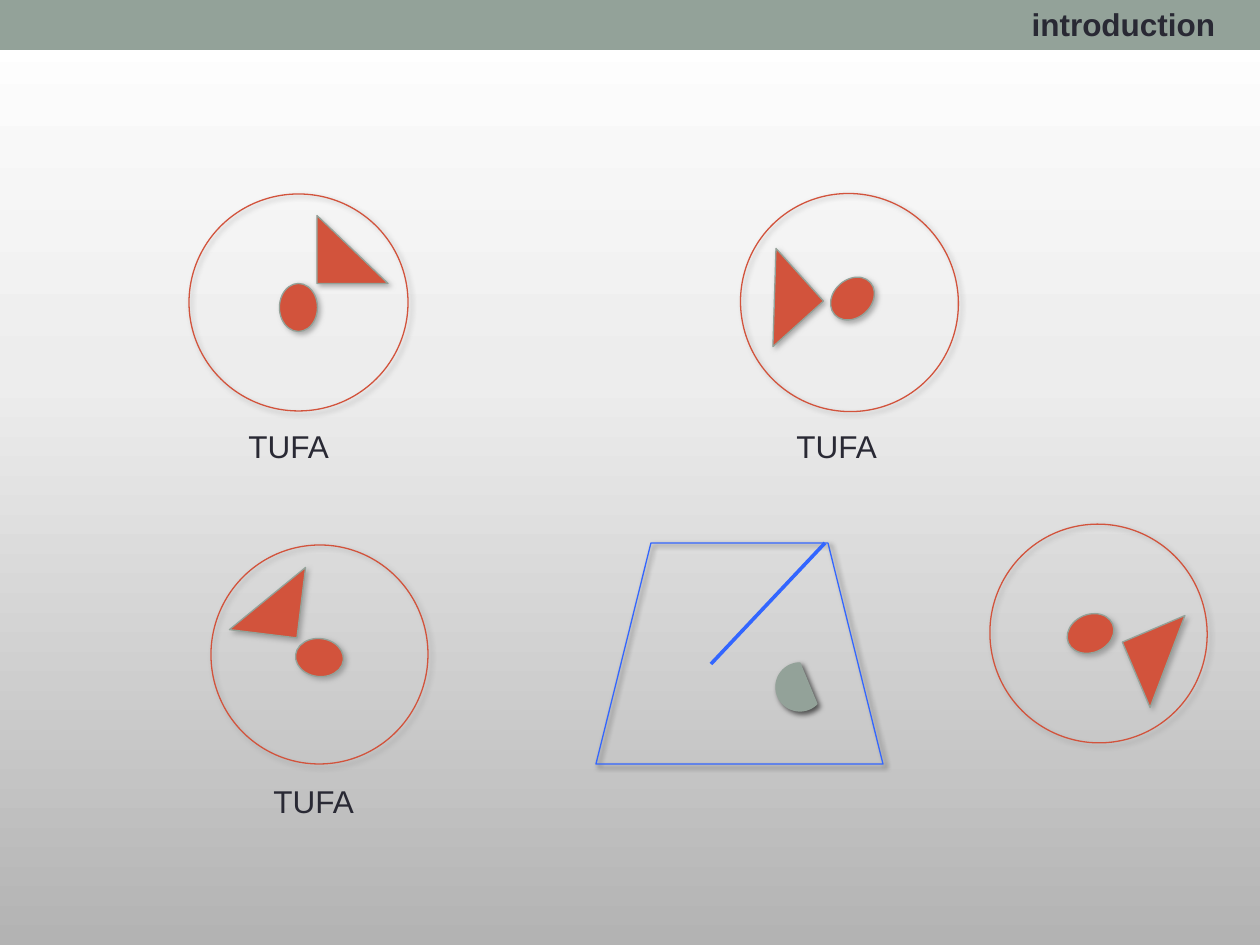
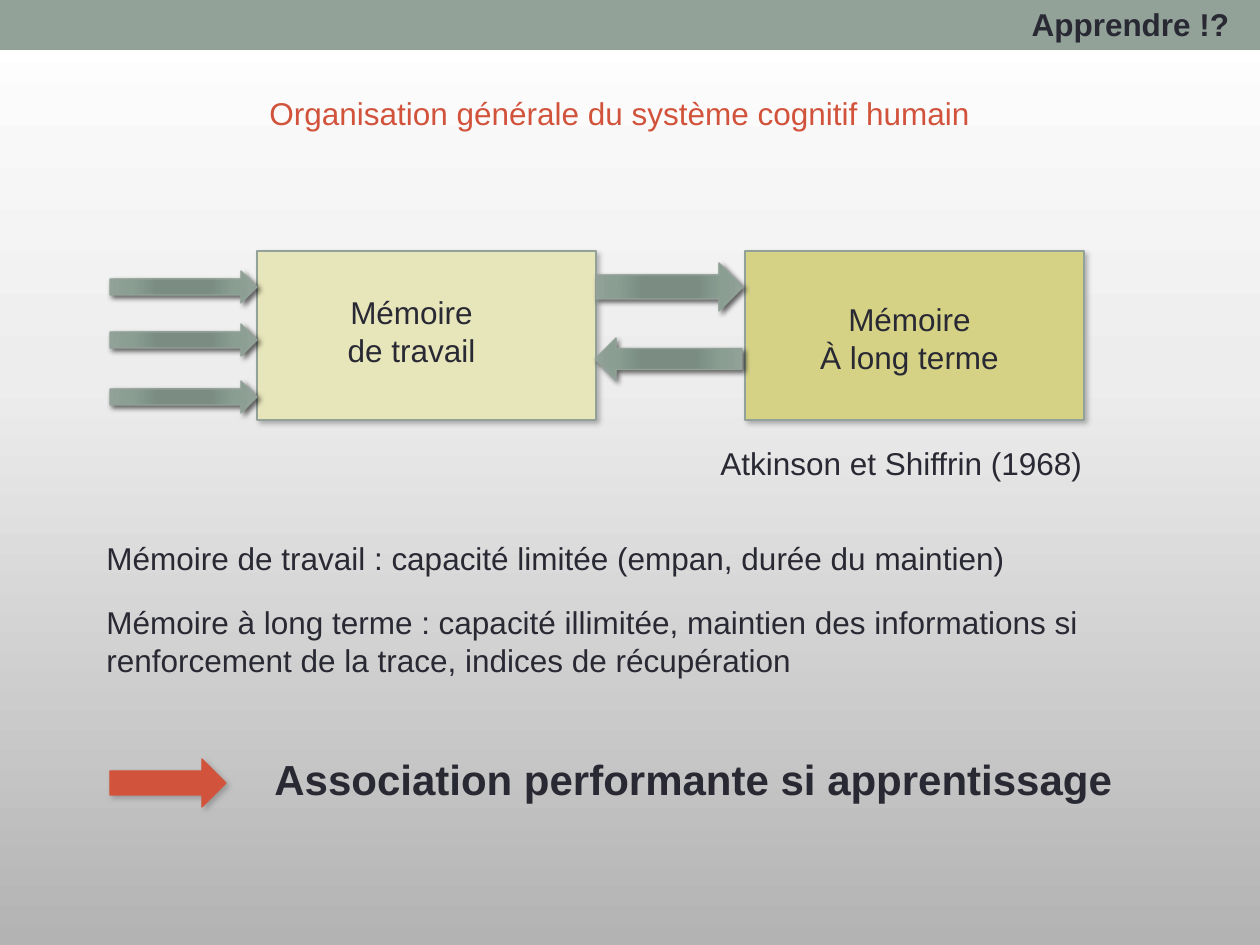
import math

from pptx import Presentation
from pptx.dml.color import RGBColor
from pptx.enum.shapes import MSO_CONNECTOR, MSO_SHAPE
from pptx.enum.text import MSO_ANCHOR, MSO_AUTO_SIZE, PP_ALIGN
from pptx.oxml import parse_xml
from pptx.oxml.ns import nsdecls, qn
from pptx.util import Emu, Pt

ELLIPSE, TRIANGLE = MSO_SHAPE.OVAL, MSO_SHAPE.RIGHT_TRIANGLE
RECTANGLE, ARROW = MSO_SHAPE.RECTANGLE, MSO_SHAPE.RIGHT_ARROW
STRAIGHT = MSO_CONNECTOR.STRAIGHT
LEFT, CENTER = PP_ALIGN.LEFT, PP_ALIGN.CENTER
TOP, MIDDLE = MSO_ANCHOR.TOP, MSO_ANCHOR.MIDDLE
GROW, FIXED = MSO_AUTO_SIZE.SHAPE_TO_FIT_TEXT, MSO_AUTO_SIZE.NONE

FONT = "Arial"
INK, SAGE, RED, BLUE = "292934", "93A299", "D2533C", "3366FF"
WHITE, BLACK, GRAY = "FFFFFF", "000000", "808080"
PALE_OLIVE, OLIVE = "E7E5BA", "D5D286"
PAGE_STOPS = [(0, WHITE), (40, "EDEDED"), (100, "B3B3B3")]
ARROW_STOPS = [(0, "7B8E82"), (34, "7B8D83"), (70, "8A9E92"), (100, SAGE)]
DOWNWARD = '<a:lin ang="5400000" scaled="0"/>'
RADIAL = ('<a:path path="circle"><a:fillToRect l="100000" t="100000" '
          'r="100000" b="100000"/></a:path>')
WIDTH, HEIGHT = 1260, 945
TITLE_ONLY = 5


def px(length):
    return Emu(round(length * 914400 / 126))


def color(hex_string):
    return RGBColor.from_string(hex_string)


def set_gradient(fill, parent, stops, direction):
    fill.solid()
    stop_xml = "".join(
        f'<a:gs pos="{position * 1000}"><a:srgbClr val="{value}"/></a:gs>'
        for position, value in stops)
    gradient = parse_xml(f'<a:gradFill {nsdecls("a")} rotWithShape="1">'
                         f'<a:gsLst>{stop_xml}</a:gsLst>{direction}</a:gradFill>')
    parent.replace(parent.find(qn("a:solidFill")), gradient)


def style_shape(shape, fill=None, line=None, shadow=None):
    if fill:
        shape.fill.solid()
        shape.fill.fore_color.rgb = color(fill)
    else:
        shape.fill.background()
    if line:
        shape.line.color.rgb = color(line)
        shape.line.width = Pt(0.75)
    else:
        shape.line.fill.background()
    shape.shadow.inherit = False
    if shadow:
        shape._element.spPr.find(qn("a:effectLst")).append(parse_xml(
            f'<a:outerShdw {nsdecls("a")} blurRad="38100" dist="25400" '
            f'dir="2700000" rotWithShape="0"><a:srgbClr val="{shadow}">'
            '<a:alpha val="60000"/></a:srgbClr></a:outerShdw>'))


def add_shape(shapes, kind, box, fill=None, line=None, shadow=None, rotation=0):
    shape = shapes.add_shape(kind, *map(px, box))
    style_shape(shape, fill, line, shadow)
    shape.rotation = rotation
    return shape


def add_centered(shapes, kind, center, size, **style):
    box = (center[0] - size[0] / 2, center[1] - size[1] / 2, *size)
    return add_shape(shapes, kind, box, **style)


def add_outline(shapes, points, **style):
    corners = [(px(x), px(y)) for x, y in points]
    builder = shapes.build_freeform(*corners[0])
    builder.add_line_segments(corners[1:], close=True)
    style_shape(builder.convert_to_shape(), **style)


def write(shape, text, size=18, ink=INK, bold=False, align=LEFT,
          anchor=TOP, wrap=True, fit=GROW):
    frame = shape.text_frame
    frame.text = text
    frame.word_wrap = wrap
    frame.auto_size = fit
    frame.vertical_anchor = anchor
    for paragraph in frame.paragraphs:
        paragraph.alignment = align
        for run in paragraph.runs:
            run.font.name = FONT
            run.font.size = Pt(size)
            run.font.bold = bold
            run.font.color.rgb = color(ink)


def add_text(shapes, box, text, **style):
    write(shapes.add_textbox(*map(px, box)), text, **style)


def add_titled_slide(presentation, title, title_width):
    slide = presentation.slides.add_slide(presentation.slide_layouts[TITLE_ONLY])
    placeholder = slide.shapes.title
    placeholder.left, placeholder.top = px(1019), px(-1)
    placeholder.width, placeholder.height = px(title_width), px(50)
    write(placeholder, title, bold=True, wrap=False)
    return slide


def build_master(presentation, slide):
    master = presentation.slide_master
    fill = master.background.fill
    fill.solid()
    set_gradient(fill, master.element.cSld.find(".//" + qn("p:bgPr")),
                 PAGE_STOPS, DOWNWARD)
    bands = [((0, 30, WIDTH, 32), WHITE), ((0, 0, WIDTH, 50), SAGE)]
    for index, (box, fill_color) in enumerate(bands):
        band = add_shape(slide.shapes, RECTANGLE, box, fill_color)._element
        band.nvSpPr.cNvPr.set("id", str(101 + index))
        master.shapes._spTree.insert(2 + index, band)


def draw_disc(slide, box, rotation, triangle_offset, oval_offset, label_offset=None):
    left, top, width, height = box
    center = left + width / 2, top + height / 2
    shapes = slide.shapes.add_group_shape().shapes
    add_shape(shapes, ELLIPSE, box, line=RED, shadow=GRAY, rotation=rotation)
    for kind, size, (right, down) in ((TRIANGLE, (71, 68), triangle_offset),
                                      (ELLIPSE, (38, 48), oval_offset)):
        add_centered(shapes, kind, (center[0] + right, center[1] + down), size,
                     fill=RED, line=SAGE, shadow=GRAY, rotation=rotation)
    if label_offset:
        add_text(shapes, (left + label_offset[0], top + label_offset[1], 107, 50),
                 "TUFA", wrap=False)


def draw_trapezoid(slide, box):
    left, top, width, height = box
    shapes = slide.shapes.add_group_shape().shapes
    inset = 55
    add_outline(shapes, [(left, top + height), (left + inset, top),
                         (left + width - inset, top), (left + width, top + height)],
                line=BLUE, shadow=BLACK)
    diagonal = shapes.add_connector(STRAIGHT, px(left + 229), px(top),
                                    px(left + 115), px(top + 121))
    diagonal.line.color.rgb = color(BLUE)
    diagonal.line.width = Pt(2.08)
    diagonal._element.spPr.append(parse_xml(f'<a:effectLst {nsdecls("a")}/>'))
    angles = [math.radians(degrees) for degrees in range(45, 271, 5)]
    add_outline(shapes, [(left + 204 + 24 * math.cos(angle),
                          top + 144 + 24 * math.sin(angle)) for angle in angles],
                fill=SAGE, line=SAGE, shadow=BLACK)


def build_introduction(slide):
    draw_trapezoid(slide, (596, 543, 287, 221))
    discs = [
        (989, 525, 67, (69, 28), (-8, 0), None),
        (189, 194, 0, (54, -53), (0, 5), (47, 227)),
        (740, 194, 228, (-75, -5), (3, -4), (44, 227)),
        (210, 546, 277, (-52, -56), (0, 3), (51, 230)),
    ]
    for left, top, *details in discs:
        draw_disc(slide, (left, top, 219, 217), *details)


def draw_flow_arrow(slide, box, rotation=0):
    arrow = add_shape(slide.shapes, ARROW, box, SAGE, SAGE, BLACK, rotation)
    set_gradient(arrow.fill, arrow._element.spPr, ARROW_STOPS, RADIAL)


def draw_memory(slide, box, fill, text, text_box):
    add_shape(slide.shapes, RECTANGLE, box, fill, SAGE, GRAY)
    right, down, width, height = text_box
    add_text(slide.shapes, (box[0] + right, box[1] + down, width, height),
             text, align=CENTER)


def draw_memory_model(slide, box):
    left, top, width, height = box
    memory_width, arrow_width = 339, 147
    work_left = left + arrow_width
    long_left = left + width - memory_width
    draw_memory(slide, (work_left, top, memory_width, height), PALE_OLIVE,
                "Mémoire\nde travail", (77, 36, 155, 89))
    draw_memory(slide, (long_left, top, memory_width, height), OLIVE,
                "Mémoire\nÀ long terme", (41, 43, 247, 89))
    between = work_left + memory_width
    draw_flow_arrow(slide, (between, top + 12, arrow_width, 48))
    draw_flow_arrow(slide, (between - 1, top + 87, arrow_width, 42), 180)
    for down in (20, 73, 130):
        draw_flow_arrow(slide, (left, top + down, arrow_width, 32))
    add_text(slide.shapes, (long_left - 37, top + height + 18, 393, 50),
             "Atkinson et Shiffrin (1968)", wrap=False)


def draw_conclusion(slide, box):
    left, top, width, height = box
    add_shape(slide.shapes, ARROW, (left, top + 12, 116, 48), RED, RED, GRAY)
    add_text(slide.shapes, (left + 152, top, width - 152, height),
             "Association performante si apprentissage", size=24, bold=True)


def build_learning(slide):
    add_text(slide.shapes, (257, 69, 733, 88),
             "Organisation générale du système cognitif humain",
             ink=RED, anchor=MIDDLE, fit=FIXED)
    draw_memory_model(slide, (110, 251, 974, 169))
    add_text(slide.shapes, (94, 533, 1076, 50),
             "Mémoire de travail : capacité limitée (empan, durée du maintien)")
    add_text(slide.shapes, (94, 597, 1007, 89),
             "Mémoire à long terme : capacité illimitée, maintien des informations "
             "si renforcement de la trace, indices de récupération")
    draw_conclusion(slide, (110, 747, 1059, 64))


def main():
    presentation = Presentation()
    presentation.slide_width, presentation.slide_height = px(WIDTH), px(HEIGHT)
    introduction = add_titled_slide(presentation, "introduction", 210)
    build_master(presentation, introduction)
    build_introduction(introduction)
    build_learning(add_titled_slide(presentation, "Apprendre !?", 226))
    presentation.save("out.pptx")


if __name__ == "__main__":
    main()
